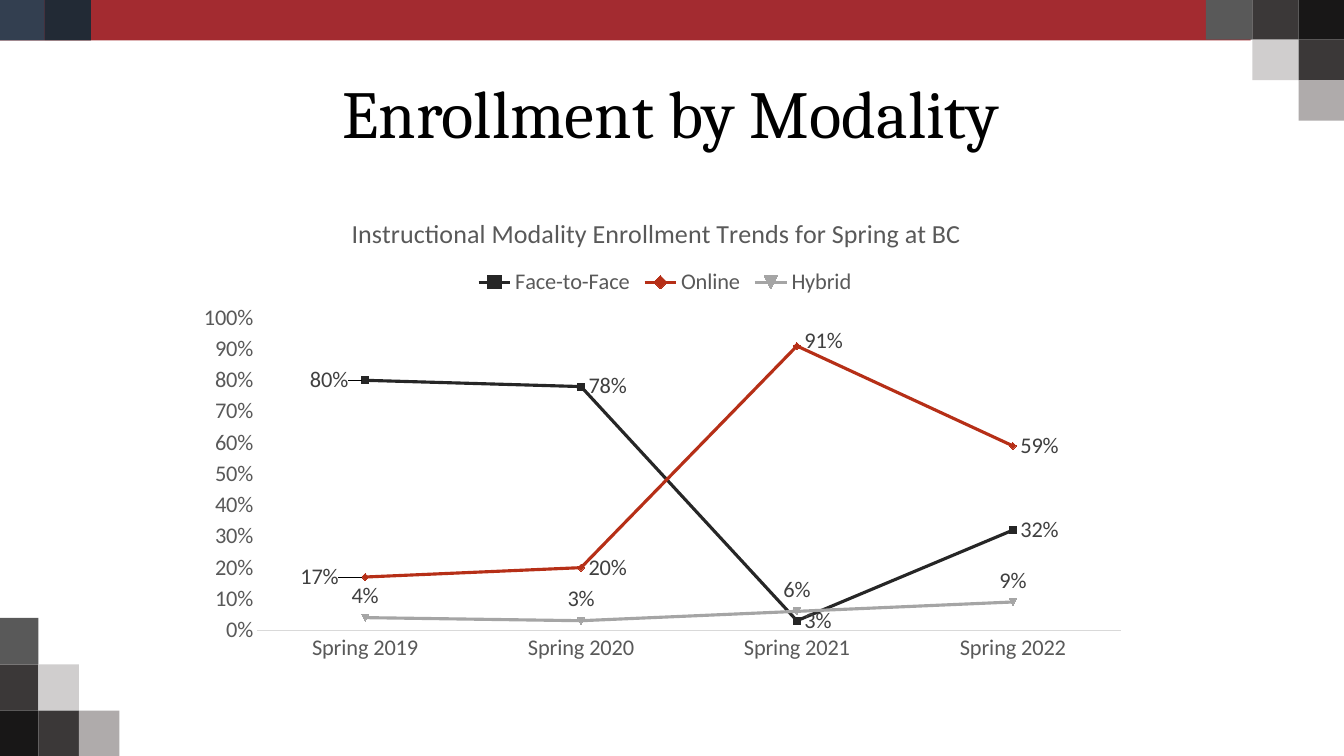
from dataclasses import dataclass, field
from typing import Any, Optional

from lxml.etree import SubElement
from pptx import Presentation
from pptx.chart.chart import Chart
from pptx.chart.data import CategoryChartData
from pptx.dml.color import RGBColor
from pptx.enum.chart import XL_CHART_TYPE, XL_LABEL_POSITION, XL_LEGEND_POSITION, XL_TICK_MARK
from pptx.enum.shapes import MSO_SHAPE
from pptx.enum.text import MSO_ANCHOR, PP_ALIGN
from pptx.oxml.ns import qn
from pptx.slide import Slide
from pptx.util import Cm, Pt

COLORS = {
    "red": "A32B30", "navy": "222A35", "slate": "333F50",
    "black": "181717", "charcoal": "3B3838", "gray": "595959",
    "silver": "AFABAB", "pale": "D0CECE", "title": "000000",
    "label": "404040", "axis": "D9D9D9",
    "face": "262626", "online": "B62F17", "hybrid": "A5A5A5",
}


@dataclass
class Tile:
    left: float
    top: float
    width: float
    height: float
    color: str


@dataclass
class PointLabel:
    index: int
    position: Any
    dx: float
    dy: float = 0


@dataclass
class Trend:
    name: str
    values: tuple
    color: str
    position: Any = XL_LABEL_POSITION.RIGHT
    moved: list = field(default_factory=list)


BAND = [
    Tile(-0.05, 0, 31.57, 1.02, "red"),
    Tile(1.12, 0, 1.17, 1.02, "navy"),
    Tile(-0.05, 0, 1.17, 1.02, "slate"),
]
STAIRS = [
    (0, 0, "gray"), (1, 0, "charcoal"), (2, 0, "black"),
    (1, 1, "pale"), (2, 1, "charcoal"), (2, 2, "silver"),
]
SEASONS = [f"Spring {year}" for year in range(2019, 2023)]
TRENDS = [
    Trend("Face-to-Face", (0.8, 0.78, 0.03, 0.32), "face",
          moved=[PointLabel(0, XL_LABEL_POSITION.LEFT, -0.01)]),
    Trend("Online", (0.17, 0.2, 0.91, 0.59), "online",
          moved=[PointLabel(0, XL_LABEL_POSITION.LEFT, -0.02),
                 PointLabel(2, XL_LABEL_POSITION.RIGHT, 0, -0.01)]),
    Trend("Hybrid", (0.04, 0.03, 0.06, 0.09), "hybrid", XL_LABEL_POSITION.ABOVE),
]


def rgb(name: str) -> RGBColor:
    return RGBColor.from_string(COLORS[name])


def set_attrs(obj: Any, values: dict) -> None:
    for key, value in values.items():
        setattr(obj, key, value)


def set_font(font: Any, size: float, color: str, name: str = "Calibri") -> None:
    set_attrs(font, {"size": Pt(size), "name": name, "bold": False})
    font.color.rgb = rgb(color)


def set_layout(parent: Any, index: int, values: dict) -> None:
    for old in parent.findall(qn("c:layout")):
        parent.remove(old)
    layout = SubElement(parent, qn("c:layout"))
    manual = SubElement(layout, qn("c:manualLayout"))
    for key, value in values.items():
        SubElement(manual, qn(f"c:{key}")).set("val", str(value))
    parent.insert(index, layout)


def add_tile(s: Slide, tile: Tile) -> None:
    sp = s.shapes.add_shape(MSO_SHAPE.RECTANGLE, Cm(tile.left), Cm(tile.top),
                            Cm(tile.width), Cm(tile.height))
    sp.shadow.inherit = False
    sp.fill.solid()
    sp.fill.fore_color.rgb = rgb(tile.color)
    sp.line.fill.background()


def add_stairs(s: Slide, left: float, top: float, transposed: bool) -> None:
    width, height = (1.02, 1.17) if transposed else (1.17, 1.02)
    for a, b, color in STAIRS:
        col, row = (b, a) if transposed else (a, b)
        add_tile(s, Tile(left + col * width, top + row * height, width, height, color))


def add_title(s: Slide, text: str) -> None:
    tf = s.shapes.add_textbox(Cm(1.6), Cm(1.19), Cm(30.61), Cm(3.51)).text_frame
    set_attrs(tf, {"word_wrap": True, "vertical_anchor": MSO_ANCHOR.MIDDLE})
    p = tf.paragraphs[0]
    set_attrs(p, {"alignment": PP_ALIGN.CENTER, "line_spacing": 0.9})
    r = p.add_run()
    r.text = text
    set_font(r.font, 48, "title", "Cambria")


def format_trend(series: Any, trend: Trend) -> None:
    series.smooth = False
    series.marker.style = None
    series.format.line.width = Pt(2.25)
    series.format.line.color.rgb = rgb(trend.color)
    labels = series.data_labels
    set_attrs(labels, {"show_value": True, "number_format": "0%",
                       "number_format_is_linked": False, "position": trend.position})
    set_font(labels.font, 16, "label")
    for moved in trend.moved:
        label = series.points[moved.index].data_label
        set_font(label.font, 16, "label")
        label.position = moved.position
        entry = labels._element.find(f"{qn('c:dLbl')}/{qn('c:idx')}[@val='{moved.index}']/..")
        set_layout(entry, 1, {"x": moved.dx, "y": moved.dy})


def format_axis(axis: Any, line: Optional[str]) -> None:
    set_attrs(axis, {"major_tick_mark": XL_TICK_MARK.NONE,
                     "minor_tick_mark": XL_TICK_MARK.NONE,
                     "has_major_gridlines": False})
    set_font(axis.tick_labels.font, 16, "gray")
    if line:
        axis.format.line.width = Pt(0.75)
        axis.format.line.color.rgb = rgb(line)
    else:
        axis.format.line.fill.background()


def format_chart(chart: Chart, title: str) -> None:
    set_font(chart.font, 16, "gray")
    chart.has_title = True
    tf = chart.chart_title.text_frame
    tf.text = title
    set_font(tf.paragraphs[0].runs[0].font, 18.6, "gray")
    chart.has_legend = True
    set_attrs(chart.legend, {"position": XL_LEGEND_POSITION.TOP, "include_in_layout": False})
    set_font(chart.legend.font, 16, "gray")
    edge = {"xMode": "edge", "yMode": "edge"}
    set_layout(chart.chart_title._element, 1, {**edge, "x": 0.17, "y": 0.05})
    set_layout(chart.legend._element, 1, {**edge, "x": 0.3, "y": 0.16})
    plot_area = chart._chartSpace.chart.plotArea
    set_layout(plot_area, 0, {"layoutTarget": "inner", **edge,
                              "x": 0.076, "y": 0.271, "w": 0.904, "h": 0.644})
    format_axis(chart.category_axis, "axis")
    format_axis(chart.value_axis, None)
    set_attrs(chart.value_axis, {"minimum_scale": 0, "maximum_scale": 1, "major_unit": 0.1})
    set_attrs(chart.value_axis.tick_labels,
              {"number_format": "0%", "number_format_is_linked": False})


def add_trend_chart(s: Slide) -> None:
    data = CategoryChartData(number_format="0%")
    data.categories = SEASONS
    for trend in TRENDS:
        data.add_series(trend.name, trend.values)
    chart = s.shapes.add_chart(XL_CHART_TYPE.LINE, Cm(4.65), Cm(4.7),
                               Cm(24.08), Cm(12.22), data).chart
    format_chart(chart, "Instructional Modality Enrollment Trends for Spring at BC")
    chart.plots[0].vary_by_categories = False
    for series, trend in zip(chart.plots[0].series, TRENDS):
        format_trend(series, trend)


def main() -> None:
    prs = Presentation()
    set_attrs(prs, {"slide_width": Cm(33.87), "slide_height": Cm(19.05)})
    s = prs.slides.add_slide(prs.slide_layouts[6])
    for tile in BAND:
        add_tile(s, tile)
    add_stairs(s, 30.39, -0.02, False)
    add_stairs(s, -0.05, 15.57, True)
    add_title(s, "Enrollment by Modality")
    add_trend_chart(s)
    prs.save("out.pptx")


if __name__ == "__main__":
    main()
